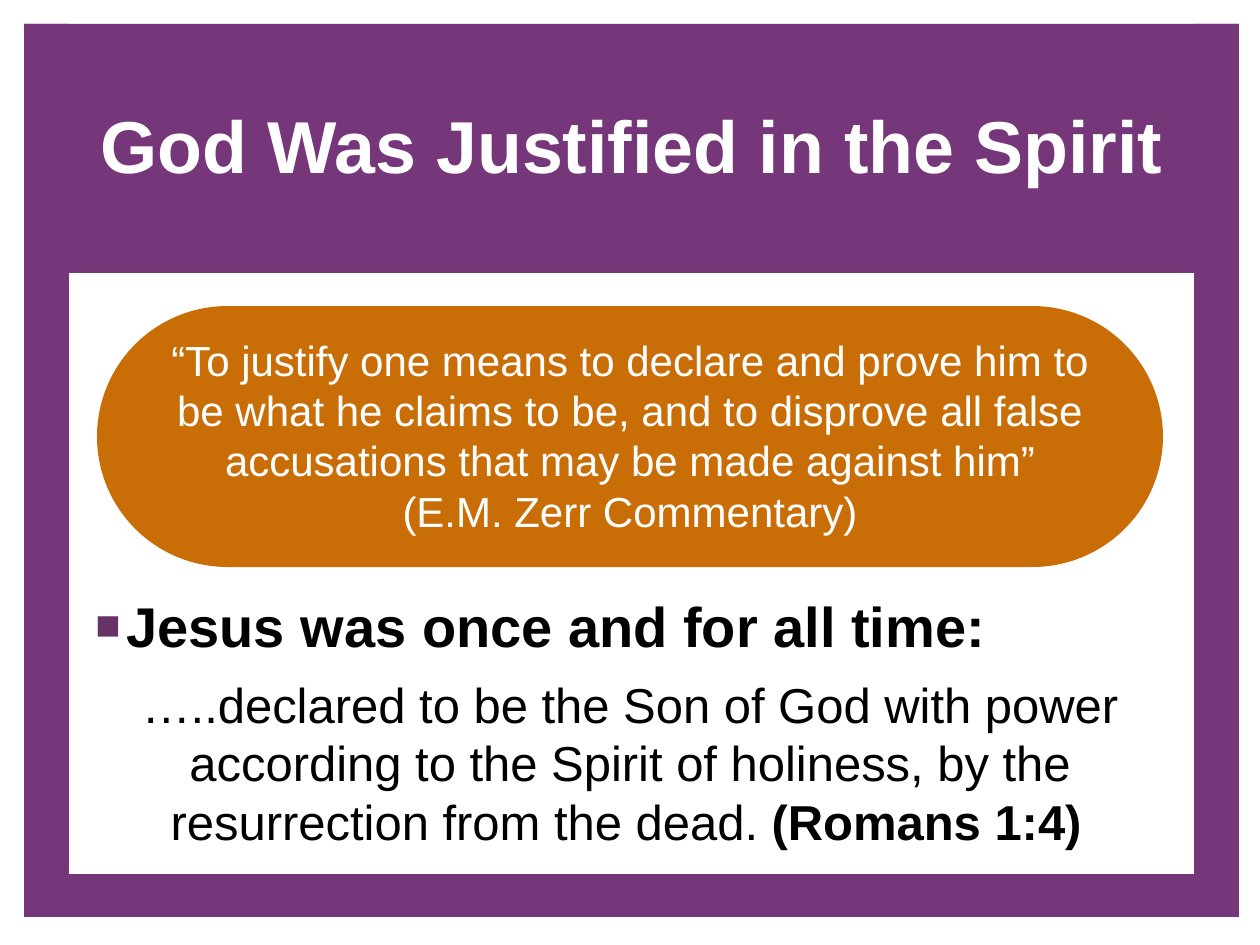
import pptx
import pptx.util
import pptx.dml.color
import pptx.enum.shapes
import pptx.enum.text
import pptx.oxml.ns
import lxml.etree

EMU_PER_PX = 914400 / 126
PURPLE, ORANGE, WHITE, BLACK = "75367A", "C96D07", "FFFFFF", "000000"
CENTER = pptx.enum.text.PP_ALIGN.CENTER
LEFT = pptx.enum.text.PP_ALIGN.LEFT


def px(length):
    return pptx.util.Emu(round(length * EMU_PER_PX))


def color(hex_string):
    return pptx.dml.color.RGBColor.from_string(hex_string)


def add_block(slide, box, fill, preset="RECTANGLE"):
    kind = getattr(pptx.enum.shapes.MSO_SHAPE, preset)
    shape = slide.shapes.add_shape(kind, *map(px, box))
    shape.shadow.inherit = False
    shape.fill.solid()
    shape.fill.fore_color.rgb = color(fill)
    shape.line.fill.background()
    return shape


def format_run(run, size, hex_string, bold=False, font="Arial"):
    run.font.name = font
    run.font.size = pptx.util.Pt(size)
    run.font.bold = bold
    run.font.color.rgb = color(hex_string)


def add_text(slide, box, text, size, hex_string, bold=False, align=CENTER):
    """Add a wrapping text box and return its only paragraph."""
    text_frame = slide.shapes.add_textbox(*map(px, box)).text_frame
    text_frame.word_wrap = True
    text_frame.text = text
    paragraph = text_frame.paragraphs[0]
    paragraph.alignment = align
    for run in paragraph.runs:
        format_run(run, size, hex_string, bold)
    return paragraph


def add_bullet(paragraph, indent, hex_string):
    properties = paragraph._p.get_or_add_pPr()
    properties.set("marL", str(px(indent)))
    properties.set("indent", str(-px(indent)))
    qn = pptx.oxml.ns.qn
    bullet_color = lxml.etree.SubElement(properties, qn("a:buClr"))
    lxml.etree.SubElement(bullet_color, qn("a:srgbClr"), val=hex_string)
    lxml.etree.SubElement(properties, qn("a:buSzPct"), val="75000")
    lxml.etree.SubElement(properties, qn("a:buFont"), typeface="Arial")
    lxml.etree.SubElement(properties, qn("a:buChar"), char="■")


def add_frame(slide, left, top, width, height):
    """Draw the border, whose top band holds the title."""
    side, header, footer = 45, 249, 43
    bars = [
        (left, top, side, height),
        (left + width - side, top, side, height),
        (left, top, width, header),
        (left, top + height - footer, width, footer),
    ]
    for bar in bars:
        add_block(slide, bar, PURPLE)


def add_title(slide, left, top, width, height):
    paragraph = add_text(slide, (left, top, width, height),
                         "God Was Justified in the Spirit", 42, WHITE, True)
    text_frame = slide.shapes[-1].text_frame
    text_frame.vertical_anchor = pptx.enum.text.MSO_ANCHOR.MIDDLE
    return paragraph


def add_quote(slide, left, top, width, height):
    pill = add_block(slide, (left, top, width, height), ORANGE, "ROUNDED_RECTANGLE")
    pill.adjustments[0] = 0.5
    inset_x, inset_y = 46, 22
    add_text(
        slide,
        (left + inset_x, top + inset_y, width - 2 * inset_x, height - 2 * inset_y),
        "“To justify one means to declare and prove him to be what he claims to be, "
        "and to disprove all false accusations that may be made against him”\v"
        "(E.M. Zerr Commentary)",
        24, WHITE)


def add_scripture(slide, left, top, width, height):
    heading_height, gap = 101, 83
    heading = add_text(slide, (left - 14, top, width + 28, heading_height),
                       "Jesus was once and for all time:", 32, BLACK, True, LEFT)
    add_bullet(heading, 31, "663366")
    verse = add_text(
        slide, (left, top + gap, width, height - gap),
        "…..declared to be the Son of God with power according to the Spirit of "
        "holiness, by the resurrection from the dead. ", 28, BLACK)
    reference = verse.add_run()
    reference.text = "(Romans 1:4)"
    format_run(reference, 28, BLACK, True)
    ending = verse.add_run()
    ending.text = " "
    format_run(ending, 18, BLACK, font="Roboto Slab")


def main():
    presentation = pptx.Presentation()
    presentation.slide_width = px(1260)
    presentation.slide_height = px(945)
    slide = presentation.slides.add_slide(presentation.slide_layouts[6])
    add_frame(slide, 24, 24, 1215, 893)
    add_title(slide, 26, 88, 1212, 112)
    add_quote(slide, 97, 306, 1066, 261)
    add_scripture(slide, 97, 585, 1066, 273)
    presentation.save("out.pptx")


if __name__ == "__main__":
    main()
